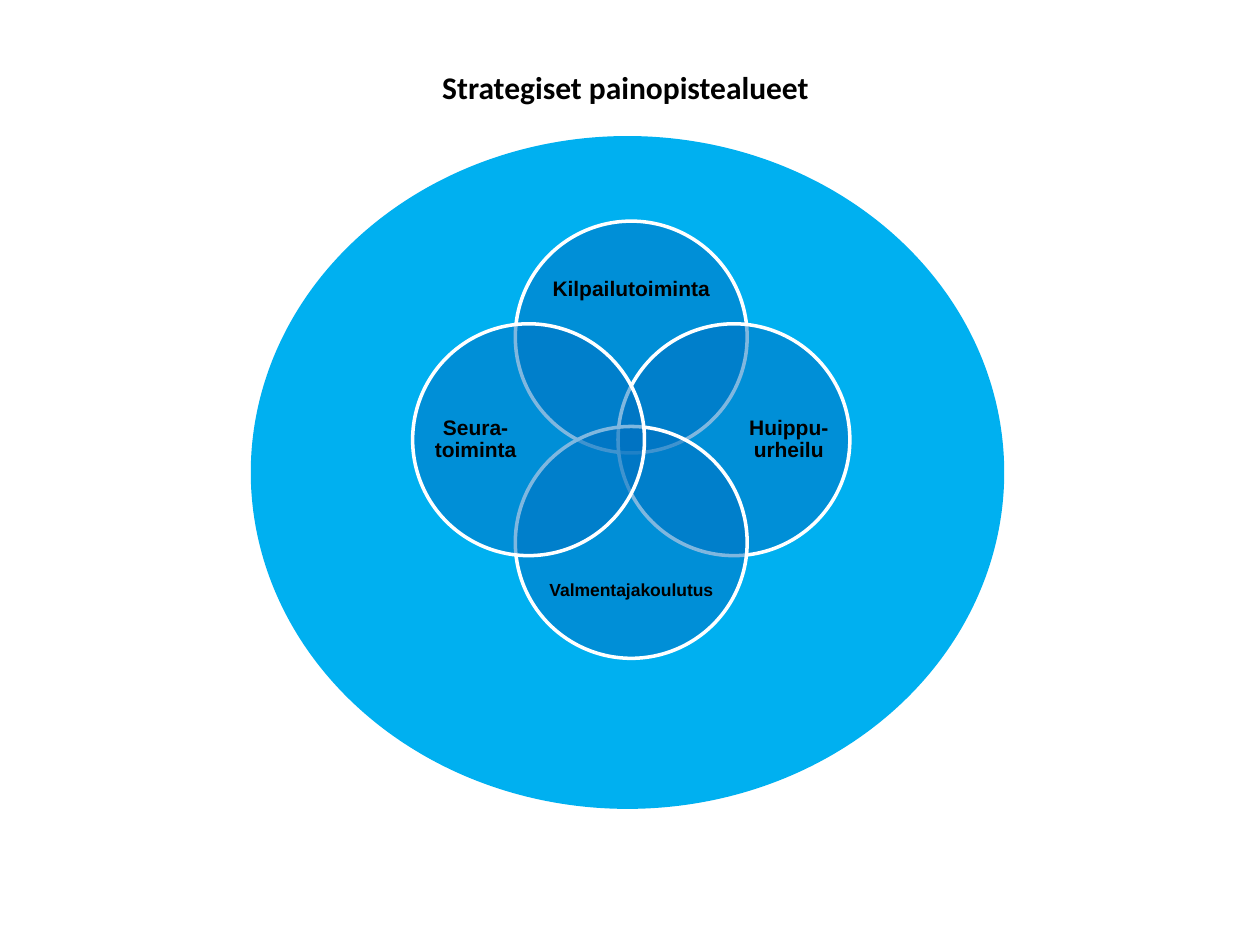
from dataclasses import dataclass

from lxml import etree
from pptx import Presentation
from pptx.dml.color import RGBColor
from pptx.enum.shapes import MSO_SHAPE
from pptx.enum.text import MSO_ANCHOR, MSO_AUTO_SIZE, PP_ALIGN
from pptx.oxml.ns import qn
from pptx.util import Inches, Pt

OVAL = MSO_SHAPE.OVAL
MIDDLE, TOP = MSO_ANCHOR.MIDDLE, MSO_ANCHOR.TOP
CENTER, LEFT = PP_ALIGN.CENTER, PP_ALIGN.LEFT
NO_FIT = MSO_AUTO_SIZE.NONE

SKY = RGBColor(0x00, 0xB0, 0xF0)
BLUE = RGBColor(0x00, 0x70, 0xC0)
WHITE = RGBColor(0xFF, 0xFF, 0xFF)
BLACK = RGBColor(0x00, 0x00, 0x00)

MID_X, MID_Y = 5.01, 3.49   # centre of the four circles
SIZE = 1.84                 # circle diameter
STEP = 0.815                # from the centre to each circle's centre
WIDE = (1.42, 0.58)
TALL = (0.71, 1.42)


@dataclass
class Area:
    name: str
    dx: int
    dy: int
    shift: float            # label centre's distance from MID_X or MID_Y
    box: tuple[float, float]
    size: int = 12


AREAS = [
    Area("Kilpailutoiminta", 0, -1, 1.19, WIDE),
    Area("Huippu-urheilu", 1, 0, 1.25, TALL),
    Area("Valmentajakoulutus", 0, 1, 1.2, WIDE, 10),
    Area("Seura-toiminta", -1, 0, 1.235, TALL),
]


def put_text(frame, text: str, *, size: int, font: str, align=LEFT,
             anchor=TOP, wrap: bool = True, inset=(0.0, 0.0),
             spacing: float = 1.0) -> None:
    frame.auto_size = NO_FIT
    frame.word_wrap = wrap
    frame.vertical_anchor = anchor
    frame.margin_left = frame.margin_right = Inches(inset[0])
    frame.margin_top = frame.margin_bottom = Inches(inset[1])
    para = frame.paragraphs[0]
    para.alignment, para.line_spacing = align, spacing
    para.space_before = Pt(0)
    run = para.add_run()
    run.text = text
    run.font.size, run.font.name, run.font.bold = Pt(size), font, True
    run.font.color.rgb = BLACK


def centred(x: float, y: float, w: float, h: float) -> list:
    """Left, top, width and height of a box around a centre point."""
    return [Inches(v) for v in (x - w / 2, y - h / 2, w, h)]


def add_disc(slide, x: float, y: float, w: float, h: float, fill: RGBColor):
    disc = slide.shapes.add_shape(OVAL, *centred(x, y, w, h))
    disc.shadow.inherit = False
    disc.fill.solid()
    disc.fill.fore_color.rgb = fill
    disc.line.fill.background()
    return disc


def add_area(slide, area: Area) -> None:
    disc = add_disc(slide, MID_X + area.dx * STEP, MID_Y + area.dy * STEP,
                    SIZE, SIZE, BLUE)
    tint = disc.fill._xPr.find(qn("a:solidFill"))[0]
    etree.SubElement(tint, qn("a:alpha"), val="50000")
    disc.line.color.rgb = WHITE
    disc.line.width = Pt(2)
    label = slide.shapes.add_textbox(*centred(
        MID_X + area.dx * area.shift, MID_Y + area.dy * area.shift, *area.box))
    put_text(label.text_frame, area.name, size=area.size, font="Arial",
             align=CENTER, anchor=MIDDLE, spacing=0.9)


def add_title(slide, text: str) -> None:
    title = slide.shapes.title
    title.left, title.top = Inches(3.41), Inches(0.49)
    title.width, title.height = Inches(3.13), Inches(0.4)
    put_text(title.text_frame, text, size=18, font="Calibri",
             wrap=False, inset=(0.1, 0.05))


def main() -> None:
    deck = Presentation()
    deck.slide_width, deck.slide_height = Inches(10), Inches(7.5)
    slide = deck.slides.add_slide(deck.slide_layouts[5])
    add_title(slide, "Strategiset painopistealueet")
    add_disc(slide, 4.98, 3.75, 5.98, 5.34, SKY)
    for area in AREAS:
        add_area(slide, area)
    deck.save("out.pptx")


if __name__ == "__main__":
    main()
